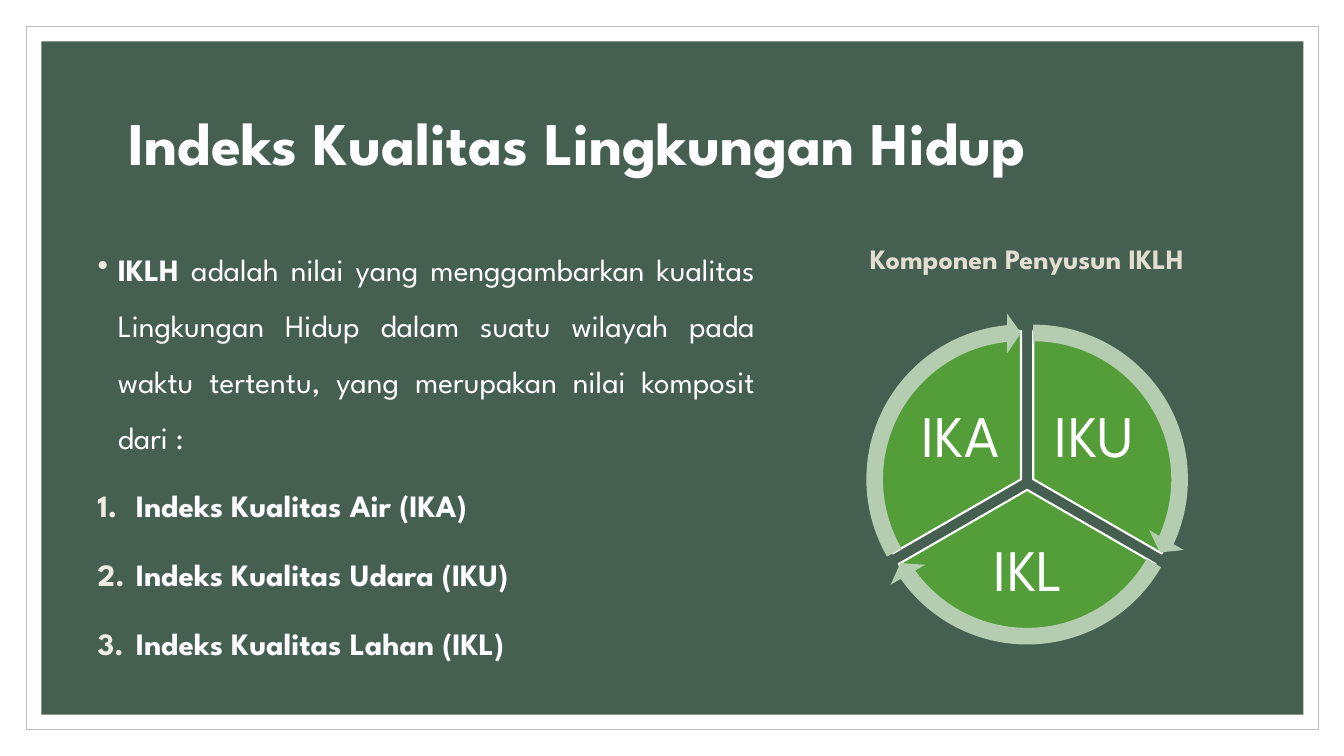
import math
from dataclasses import dataclass

import lxml.etree
import pptx
import pptx.dml.color
import pptx.enum.shapes
import pptx.enum.text
import pptx.oxml.ns
import pptx.shapes.autoshape
import pptx.slide
import pptx.text.text
import pptx.util

RGBColor = pptx.dml.color.RGBColor
Align = pptx.enum.text.PP_ALIGN
Anchor = pptx.enum.text.MSO_ANCHOR
Preset = pptx.enum.shapes.MSO_SHAPE

WHITE = RGBColor(0xFF, 0xFF, 0xFF)
FRAME_GREY = RGBColor(0xBF, 0xBF, 0xBF)
DARK_GREEN = RGBColor(0x45, 0x5F, 0x51)
SLICE_GREEN = RGBColor(0x54, 0x9E, 0x39)
ARROW_GREEN = RGBColor(0xB4, 0xCC, 0xAF)
CREAM = RGBColor(0xE3, 0xDE, 0xD1)
BULLET_CREAM = RGBColor(0xEE, 0xEB, 0xE3)
FONT = "League Spartan"

CELL = pptx.util.Inches(0.1)  # grid cell; the slide has 133.33 columns and 75 rows
COLUMNS, ROWS = 133.33, 75

WHEEL_COLUMN, WHEEL_ROW = 101.9, 47.9
SLICE_SIZE, ARROW_SIZE, SLICE_SHIFT = 29.4, 33, 0.7
ARROW_BAND, ARROW_HEAD, ARROW_TIP = 0.05, 3.28, 0.06
ANGLE_UNIT = 0.6  # one degree expressed as an adjustment value


@dataclass(frozen=True)
class Area:
    column: float
    row: float
    columns: float
    rows: float

    def emu(self) -> list[int]:
        return [round(n * CELL) for n in (self.column, self.row, self.columns, self.rows)]


@dataclass(frozen=True)
class Slice:
    label: str
    start: int  # degrees, clockwise from the right
    label_area: Area


@dataclass(frozen=True)
class Item:
    runs: tuple[tuple[str, bool], ...]
    indent: float  # inches
    marker: str
    marker_value: dict[str, str]


SLICES = (
    Slice("IKU", 270, Area(103.3, 39.1, 10.5, 8.8)),
    Slice("IKL", 30, Area(94.2, 52.9, 15.7, 7.7)),
    Slice("IKA", 150, Area(90, 39.1, 10.5, 8.8)),
)
DEFINITION = Item(
    (("IKLH", True),
     (" adalah nilai yang menggambarkan kualitas Lingkungan Hidup dalam suatu wilayah "
      "pada waktu tertentu, yang merupakan nilai komposit dari :", False)),
    0.2, "a:buChar", {"char": "•"})
INDICES = ("Indeks Kualitas Air (IKA)", "Indeks Kualitas Udara (IKU)", "Indeks Kualitas Lahan (IKL)")
ITEMS = (DEFINITION, *(Item(((text, True),), 0.38, "a:buAutoNum", {"type": "arabicPeriod"})
                       for text in INDICES))


def add_filled(page: pptx.slide.Slide, preset: Preset, area: Area, fill: RGBColor,
               line: RGBColor | None = None, width: float = 1) -> pptx.shapes.autoshape.Shape:
    shape = page.shapes.add_shape(preset, *area.emu())
    shape.shadow.inherit = False
    shape.fill.solid()
    shape.fill.fore_color.rgb = fill
    if line is None:
        shape.line.fill.background()
    else:
        shape.line.color.rgb = line
        shape.line.width = pptx.util.Pt(width)
    return shape


def add_run(para: pptx.text.text._Paragraph, text: str, size: float,
            colour: RGBColor = WHITE, bold: bool = False) -> None:
    span = para.add_run()
    span.text = text
    span.font.name = FONT
    span.font.size = pptx.util.Pt(size)
    span.font.color.rgb = colour
    span.font.bold = bold


def add_box(page: pptx.slide.Slide, area: Area, anchor: Anchor) -> pptx.text.text.TextFrame:
    frame = page.shapes.add_textbox(*area.emu()).text_frame
    frame.word_wrap = True
    frame.vertical_anchor = anchor
    return frame


def set_marker(para: pptx.text.text._Paragraph, item: Item) -> None:
    """Give the paragraph a hanging indent and a coloured bullet or number."""
    properties = para._p.get_or_add_pPr()
    indent = pptx.util.Inches(item.indent)
    properties.set("marL", str(indent))
    properties.set("indent", str(-indent))
    qn = pptx.oxml.ns.qn
    colour = lxml.etree.SubElement(properties, qn("a:buClr"))
    lxml.etree.SubElement(colour, qn("a:srgbClr"), val=str(BULLET_CREAM))
    lxml.etree.SubElement(properties, qn(item.marker), item.marker_value)


def add_title(page: pptx.slide.Slide) -> None:
    title = page.shapes.title
    page.shapes.element.append(title.element)  # bring in front of the panels
    title.left, title.top, title.width, title.height = Area(11.7, 7, 110, 15).emu()
    frame = title.text_frame
    frame.auto_size = pptx.enum.text.MSO_AUTO_SIZE.NONE
    frame.vertical_anchor = Anchor.MIDDLE
    para = frame.paragraphs[0]
    para.alignment = Align.LEFT
    para.line_spacing = 0.9
    add_run(para, "Indeks Kualitas Lingkungan Hidup", 43.2, bold=True)


def add_items(page: pptx.slide.Slide) -> None:
    frame = add_box(page, Area(8.7, 22.5, 67.2, 45.8), Anchor.TOP)
    for index, item in enumerate(ITEMS):
        para = frame.add_paragraph() if index else frame.paragraphs[0]
        para.alignment = Align.JUSTIFY
        para.line_spacing = 1.5
        para.space_before = pptx.util.Pt(9)
        set_marker(para, item)
        for text, bold in item.runs:
            add_run(para, text, 22.2, bold=bold)


def wheel_area(part: Slice, size: float) -> Area:
    """Square around the wheel's centre, shifted outwards along the slice's middle."""
    middle = math.radians(part.start + 60)
    column = WHEEL_COLUMN + SLICE_SHIFT * math.cos(middle)
    row = WHEEL_ROW + SLICE_SHIFT * math.sin(middle)
    return Area(column - size / 2, row - size / 2, size, size)


def adjust(shape: pptx.shapes.autoshape.Shape, *values: float) -> None:
    for index, value in enumerate(values):
        shape.adjustments[index] = value


def add_wheel(page: pptx.slide.Slide) -> None:
    for part in SLICES:
        start = part.start * ANGLE_UNIT
        end = (part.start + 120) % 360 * ANGLE_UNIT
        pie = add_filled(page, Preset.PIE, wheel_area(part, SLICE_SIZE), SLICE_GREEN, WHITE, 1.5)
        adjust(pie, start, end)
        frame = add_box(page, part.label_area, Anchor.MIDDLE)
        frame.margin_left = frame.margin_right = pptx.util.Inches(0.06)
        frame.margin_top = frame.margin_bottom = pptx.util.Inches(0.06)
        para = frame.paragraphs[0]
        para.alignment = Align.CENTER
        para.line_spacing = 0.9
        add_run(para, part.label, 42)
        arrow = add_filled(page, Preset.CIRCULAR_ARROW, wheel_area(part, ARROW_SIZE), ARROW_GREEN)
        adjust(arrow, ARROW_BAND, ARROW_HEAD, end - ARROW_HEAD, start, ARROW_TIP)


def main() -> None:
    deck = pptx.Presentation()
    deck.slide_width, deck.slide_height = round(COLUMNS * CELL), ROWS * CELL
    page = deck.slides.add_slide(deck.slide_layouts[5])
    add_filled(page, Preset.RECTANGLE, Area(2.6, 2.6, 128.2, 69.8), WHITE, FRAME_GREY, 0.5)
    add_filled(page, Preset.RECTANGLE, Area(4.1, 4.1, 125.2, 66.8), DARK_GREEN)
    add_title(page)
    add_items(page)
    caption = add_box(page, Area(75.9, 22.1, 52, 7), Anchor.MIDDLE).paragraphs[0]
    caption.alignment = Align.CENTER
    add_run(caption, "Komponen Penyusun IKLH", 20, CREAM, bold=True)
    add_wheel(page)
    deck.save("out.pptx")


if __name__ == "__main__":
    main()
